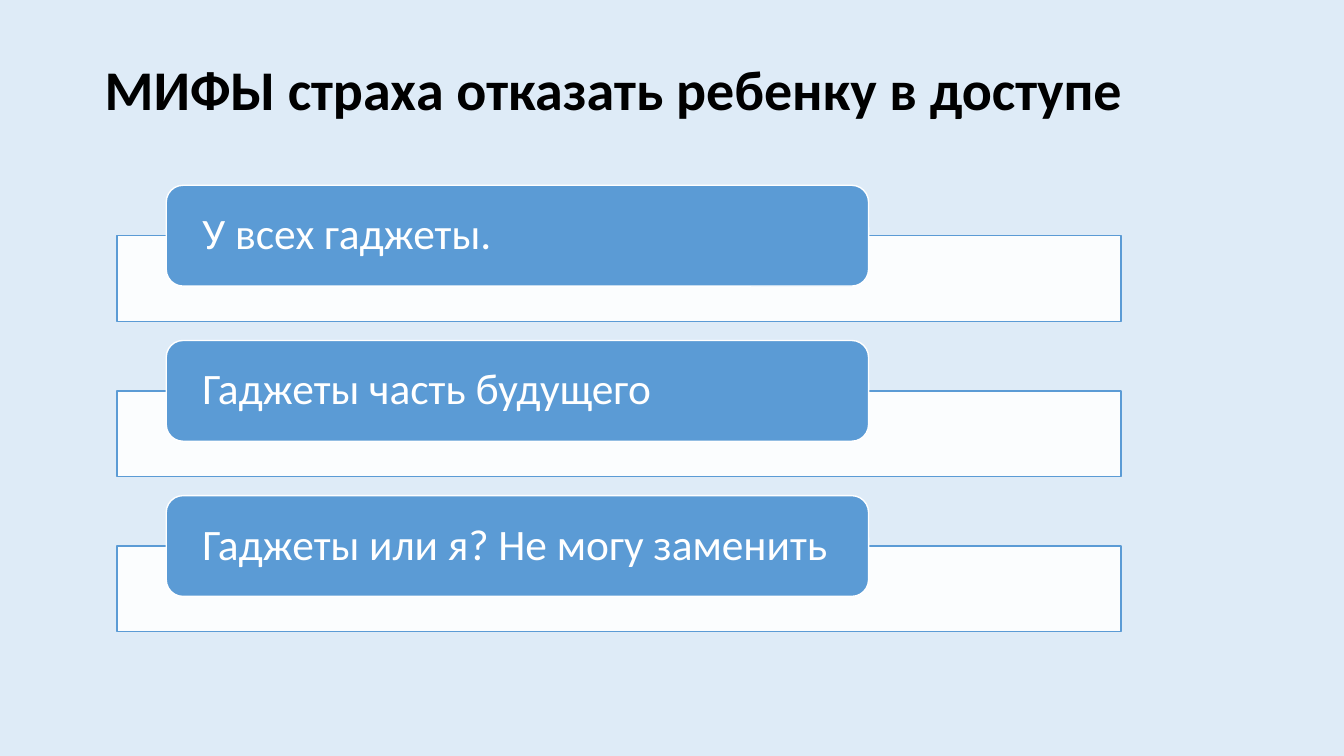
"""Build the slide on myths behind the fear of refusing a child access to gadgets."""
import pptx
import pptx.dml.color
import pptx.enum.shapes
import pptx.enum.text
import pptx.oxml.ns
import pptx.util
from lxml import etree

Cm = pptx.util.Cm
Pt = pptx.util.Pt
RGBColor = pptx.dml.color.RGBColor
MSO_SHAPE = pptx.enum.shapes.MSO_SHAPE
PP_ALIGN = pptx.enum.text.PP_ALIGN

BACKGROUND = RGBColor(0xDE, 0xEB, 0xF7)
BLUE = RGBColor(0x5B, 0x9B, 0xD5)
WHITE = RGBColor(0xFF, 0xFF, 0xFF)
BLACK = RGBColor(0x00, 0x00, 0x00)

MYTHS = [
    "У всех гаджеты.",
    "Гаджеты часть будущего",
    "Гаджеты или я? Не могу заменить",
]
FIRST_TOP = 4.67
ROW_STEP = 3.91
PANEL_OFFSET = 1.27


def add_block(kind, left, top, width, height, fill, line):
    shape = slide.shapes.add_shape(kind, Cm(left), Cm(top), Cm(width), Cm(height))
    shape.shadow.inherit = False
    shape.fill.solid()
    shape.fill.fore_color.rgb = fill
    shape.line.color.rgb = line
    shape.line.width = Pt(1)
    return shape


def write_text(frame, text, size, color, bold):
    paragraph = frame.paragraphs[0]
    paragraph.alignment = PP_ALIGN.LEFT
    run = paragraph.add_run()
    run.text = text
    run.font.color.rgb = color
    font_format = {"name": "Calibri", "size": Pt(size), "bold": bold}
    for attribute, value in font_format.items():
        setattr(run.font, attribute, value)
    return paragraph


presentation = pptx.Presentation()
presentation.slide_width = Cm(33.87)
presentation.slide_height = Cm(19.05)
slide = presentation.slides.add_slide(presentation.slide_layouts[6])
slide.background.fill.solid()
slide.background.fill.fore_color.rgb = BACKGROUND

for index, myth in enumerate(MYTHS):
    top = FIRST_TOP + index * ROW_STEP
    panel = add_block(MSO_SHAPE.RECTANGLE, 2.95, top + PANEL_OFFSET, 25.3, 2.16, WHITE, BLUE)
    panel_color = panel.fill._xPr.find(".//" + pptx.oxml.ns.qn("a:srgbClr"))
    etree.SubElement(panel_color, pptx.oxml.ns.qn("a:alpha"), val="90000")

    label = add_block(MSO_SHAPE.ROUNDED_RECTANGLE, 4.19, top, 17.7, 2.54, BLUE, WHITE)
    frame_format = {
        "margin_left": Cm(0.79),
        "margin_right": Cm(0.79),
        "margin_top": 0,
        "margin_bottom": 0,
        "word_wrap": True,
        "vertical_anchor": pptx.enum.text.MSO_ANCHOR.MIDDLE,
    }
    for attribute, value in frame_format.items():
        setattr(label.text_frame, attribute, value)
    paragraph = write_text(label.text_frame, myth, 31, WHITE, False)
    paragraph.line_spacing = 0.9

title = slide.shapes.add_textbox(Cm(2.39), Cm(1.24), Cm(26.42), Cm(1.96))
title.text_frame.word_wrap = False
title.text_frame.auto_size = pptx.enum.text.MSO_AUTO_SIZE.SHAPE_TO_FIT_TEXT
write_text(title.text_frame, "МИФЫ страха отказать ребенку в доступе", 40, BLACK, True)

presentation.save("out.pptx")
